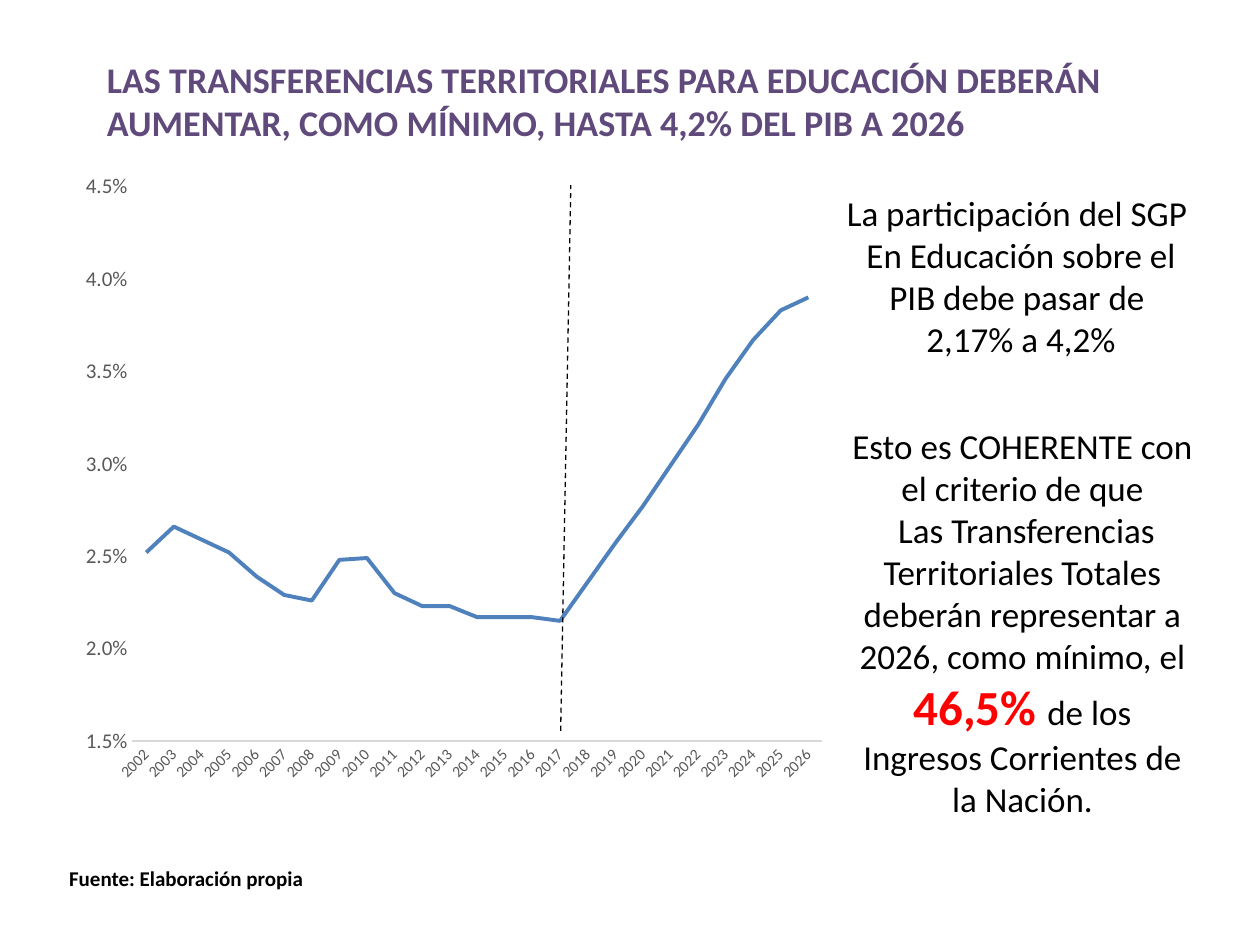
from lxml import etree
from pptx import Presentation
from pptx.chart.data import CategoryChartData
from pptx.dml.color import RGBColor
from pptx.enum.chart import XL_CHART_TYPE as ChartType, XL_TICK_MARK as Tick
from pptx.enum.dml import MSO_LINE_DASH_STYLE as Dash
from pptx.enum.shapes import MSO_CONNECTOR as Connector
from pptx.enum.text import MSO_ANCHOR as Anchor, MSO_AUTO_SIZE as AutoSize, PP_ALIGN as Align
from pptx.oxml.ns import qn
from pptx.util import Pt

BLACK = RGBColor(0x00, 0x00, 0x00)
PURPLE = RGBColor(0x60, 0x4A, 0x7B)
RED = RGBColor(0xFF, 0x00, 0x00)
BLUE = RGBColor(0x4F, 0x81, 0xBD)
GREY = RGBColor(0x59, 0x59, 0x59)
LIGHT_GREY = RGBColor(0xD9, 0xD9, 0xD9)

YEARS = range(2002, 2027)
GDP_SHARE = (
    0.0252, 0.0266, 0.0259, 0.0252, 0.0239, 0.0229, 0.0226, 0.0248, 0.0249,
    0.023, 0.0223, 0.0223, 0.0217, 0.0217, 0.0217, 0.0215, 0.0236, 0.0257,
    0.0277, 0.0299, 0.0321, 0.0346, 0.0367, 0.0383, 0.039,
)

TITLE = {"size": 20.6, "color": PURPLE, "bold": True}
BODY = {"size": 20}
HIGHLIGHT = {"size": 28, "color": RED, "bold": True}
SOURCE = {"size": 12, "bold": True}


class Slide:
    font = "Calibri"

    def __init__(self, prs):
        self.s = prs.slides.add_slide(prs.slide_layouts[6])

    def style(self, font, size, color=BLACK, bold=False):
        values = {"name": self.font, "size": Pt(size), "bold": bold}
        for name, value in values.items():
            setattr(font, name, value)
        font.color.rgb = color

    def text(self, box, paragraphs, align=Align.LEFT, anchor=Anchor.TOP,
             auto_size=AutoSize.SHAPE_TO_FIT_TEXT):
        """Add a text box; each paragraph is a list of (text, style) runs."""
        tf = self.s.shapes.add_textbox(*map(Pt, box)).text_frame
        values = {"word_wrap": True, "auto_size": auto_size, "vertical_anchor": anchor}
        for name, value in values.items():
            setattr(tf, name, value)
        for i, runs in enumerate(paragraphs):
            p = tf.add_paragraph() if i else tf.paragraphs[0]
            p.alignment = align
            for text, fmt in runs:
                r = p.add_run()
                r.text = text
                self.style(r.font, **fmt)

    def dashed_line(self, start, end):
        line = self.s.shapes.add_connector(Connector.STRAIGHT, *map(Pt, start + end))
        line.line.color.rgb = BLACK
        line.line.width = Pt(0.75)
        line.line.dash_style = Dash.DASH
        etree.SubElement(line._element.spPr, qn("a:effectLst"))

    def line_chart(self, box, categories, values, plot):
        data = CategoryChartData(number_format="0.0%")
        data.categories = [str(c) for c in categories]
        data.add_series("Series 1", values)
        chart = self.s.shapes.add_chart(ChartType.LINE, *map(Pt, box), data).chart
        chart.has_legend = chart.has_title = False
        self.style(chart.font, 10)

        cat, val = chart.category_axis, chart.value_axis
        for axis, size in ((cat, 9), (val, 12)):
            axis.major_tick_mark = axis.minor_tick_mark = Tick.NONE
            axis.has_major_gridlines = False
            self.style(axis.tick_labels.font, size, GREY)
        cat.format.line.color.rgb = LIGHT_GREY
        cat.format.line.width = Pt(0.75)
        cat._element.find(qn("c:txPr")).find(qn("a:bodyPr")).set("rot", "-2700000")
        val.format.line.fill.background()
        scale = {"minimum_scale": 0.015, "maximum_scale": 0.045, "major_unit": 0.005}
        for name, value in scale.items():
            setattr(val, name, value)
        val.tick_labels.number_format = "0.0%"
        val.tick_labels.number_format_is_linked = False

        chart.plots[0].vary_by_categories = False
        series = chart.plots[0].series[0]
        series.smooth = False
        series.format.line.color.rgb = BLUE
        series.format.line.width = Pt(2.25)
        self.place_plot(chart, plot)

    def place_plot(self, chart, plot):
        """Fix the inner plot area as fractions of the chart: x, y, w, h."""
        area = chart._chartSpace.chart.plotArea
        for old in area.findall(qn("c:layout")):
            area.remove(old)
        layout = etree.Element(qn("c:layout"))
        area.insert(0, layout)
        manual = etree.SubElement(layout, qn("c:manualLayout"))
        settings = [("layoutTarget", "inner"), ("xMode", "edge"), ("yMode", "edge")]
        for tag, value in settings + list(zip("xywh", plot)):
            etree.SubElement(manual, qn(f"c:{tag}")).set("val", str(value))


def main():
    prs = Presentation()
    prs.slide_width, prs.slide_height = Pt(720), Pt(540)
    slide = Slide(prs)
    slide.line_chart((32.4, 94.3, 446.4, 362.2), YEARS, GDP_SHARE,
                     plot=(0.097, 0.034, 0.883, 0.875))
    slide.text((54, 21.6, 623.5, 72), [[(
        "LAS TRANSFERENCIAS TERRITORIALES PARA EDUCACIÓN DEBERÁN AUMENTAR, "
        "COMO MÍNIMO, HASTA 4,2% DEL PIB A 2026", TITLE)]],
        anchor=Anchor.MIDDLE, auto_size=AutoSize.NONE)
    slide.text((478.8, 239, 211, 234.7), [
        [("Esto es COHERENTE con el criterio de que", BODY)],
        [(" Las Transferencias Territoriales Totales deberán representar a 2026, "
          "como mínimo, el ", BODY),
         ("46,5% ", HIGHLIGHT),
         ("de los Ingresos Corrientes de la Nación.", BODY)],
    ], Align.CENTER)
    slide.text((32.4, 491, 402.5, 21.6), [[("Fuente: Elaboración propia", SOURCE)]])
    slide.dashed_line((320.4, 417.6), (326.2, 105.8))
    slide.text((476.6, 105.8, 213.8, 104.4), [
        [("La participación del SGP ", BODY)],
        [("En Educación sobre el PIB debe pasar de ", BODY)],
        [("2,17% a 4,2%", BODY)],
    ], Align.CENTER)
    prs.save("out.pptx")


if __name__ == "__main__":
    main()
